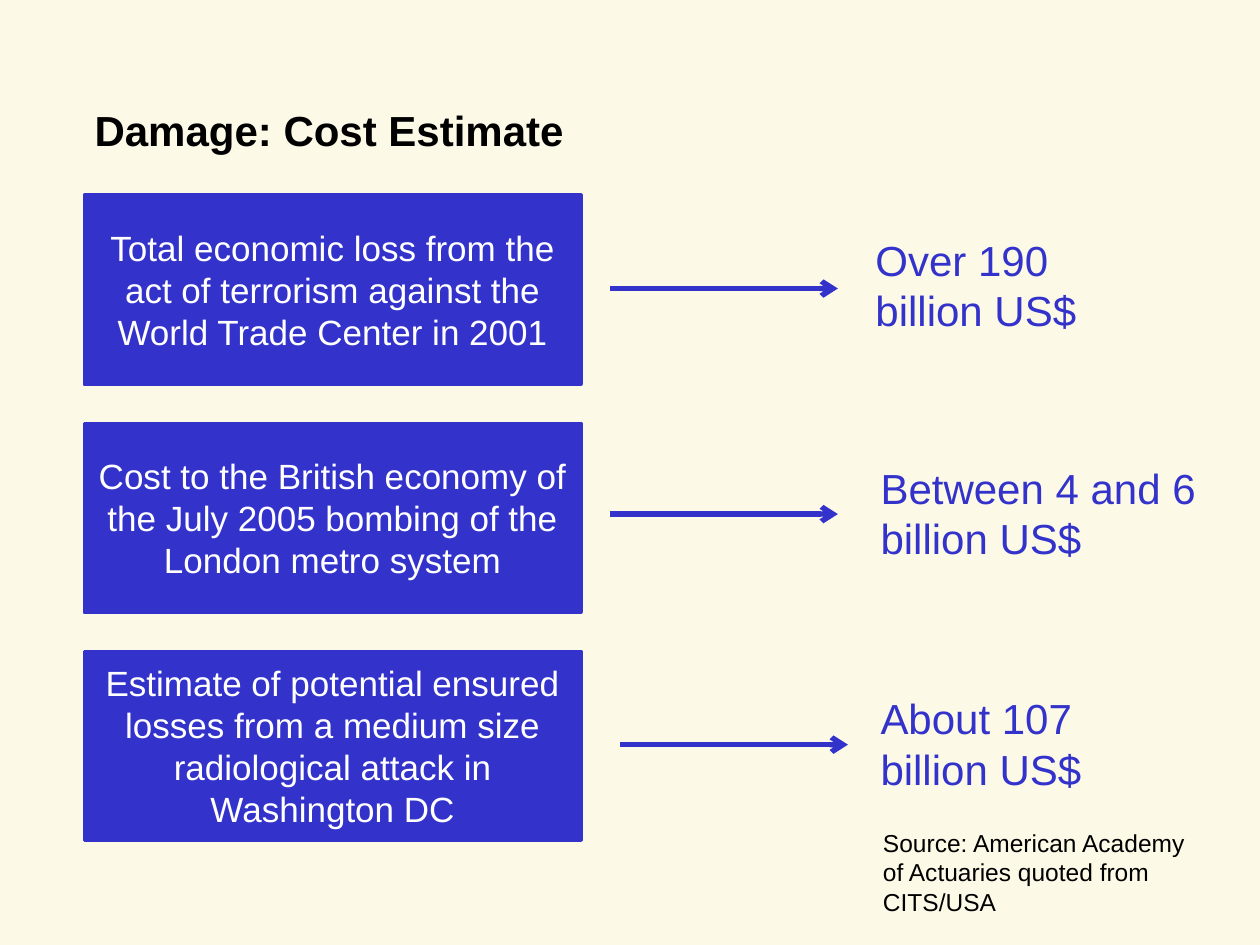
from dataclasses import dataclass

from lxml.etree import SubElement
from pptx import Presentation
from pptx.dml.color import RGBColor
from pptx.enum.shapes import MSO_CONNECTOR, MSO_SHAPE
from pptx.enum.text import MSO_ANCHOR, MSO_AUTO_SIZE, PP_ALIGN
from pptx.oxml.ns import qn
from pptx.util import Inches, Pt


@dataclass(frozen=True)
class Theme:
    font: str = "Arial"
    background: RGBColor = RGBColor(0xFC, 0xFA, 0xE7)
    accent: RGBColor = RGBColor(0x33, 0x33, 0xCC)
    dark: RGBColor = RGBColor(0, 0, 0)
    light: RGBColor = RGBColor(0xFF, 0xFF, 0xFF)
    large: int = 24
    body: int = 20
    small: int = 14


class SlideBuilder:
    """Draws on a grid of 100 columns by 75 rows."""

    COLS, ROWS = 100, 75

    def __init__(self, prs, theme):
        self.theme = theme
        self.col = prs.slide_width / self.COLS
        self.row = prs.slide_height / self.ROWS
        self.slide = prs.slides.add_slide(prs.slide_layouts[6])
        fill = self.slide.background.fill
        fill.solid()
        fill.fore_color.rgb = theme.background

    def place(self, x, y, w, h):
        return (round(x * self.col), round(y * self.row),
                round(w * self.col), round(h * self.row))

    def add_text(self, tf, text, size, color, bold=False, align=PP_ALIGN.LEFT):
        tf.word_wrap = True
        p = tf.paragraphs[0]
        p.alignment = align
        r = p.add_run()
        r.text = text
        r.font.name = self.theme.font
        r.font.size = Pt(size)
        r.font.bold = bold
        r.font.color.rgb = color

    def title(self, text, *cell):
        tf = self.slide.shapes.add_textbox(*self.place(*cell)).text_frame
        tf.margin_left = tf.margin_right = tf.margin_top = tf.margin_bottom = 0
        tf.vertical_anchor = MSO_ANCHOR.BOTTOM
        self.add_text(tf, text, self.theme.large, self.theme.dark, bold=True)

    def label(self, text, size, color, *cell):
        tf = self.slide.shapes.add_textbox(*self.place(*cell)).text_frame
        tf.auto_size = MSO_AUTO_SIZE.SHAPE_TO_FIT_TEXT
        self.add_text(tf, text, size, color)

    def box(self, text, *cell):
        sp = self.slide.shapes.add_shape(MSO_SHAPE.RECTANGLE, *self.place(*cell))
        sp.shadow.inherit = False
        sp.fill.solid()
        sp.fill.fore_color.rgb = self.theme.accent
        sp.line.color.rgb = self.theme.accent
        sp.line.width = Pt(2)
        sp.text_frame.vertical_anchor = MSO_ANCHOR.MIDDLE
        self.add_text(sp.text_frame, text, self.theme.body, self.theme.light,
                      align=PP_ALIGN.CENTER)

    def arrow(self, x, y, length):
        left, top, width, _ = self.place(x, y, length, 0)
        arrow = self.slide.shapes.add_connector(
            MSO_CONNECTOR.STRAIGHT, left, top, left + width, top)
        arrow.line.color.rgb = self.theme.accent
        arrow.line.width = Pt(3)
        properties = arrow.element.spPr
        SubElement(properties.find(qn("a:ln")), qn("a:tailEnd"), type="arrow")
        SubElement(properties, qn("a:effectLst"))


# Event, arrow start (column, row), cost, cost position (column, row), cost width
ESTIMATES = [
    ("Total economic loss from the act of terrorism against the "
     "World Trade Center in 2001",
     (48.4, 22.9), "Over 190 billion US$", (68.5, 18.1), 23.6),
    ("Cost to the British economy of the July 2005 bombing of the "
     "London metro system",
     (48.4, 40.8), "Between 4 and 6 billion US$", (68.9, 36.2), 29.1),
    ("Estimate of potential ensured losses from a medium size "
     "radiological attack in Washington DC",
     (49.2, 59.1), "About 107 billion US$", (68.9, 54.5), 23.6),
]
BOX_TOP, BOX_PITCH = 15.5, 18.1


def main():
    prs = Presentation()
    prs.slide_width, prs.slide_height = Inches(10), Inches(7.5)
    theme = Theme()
    s = SlideBuilder(prs, theme)

    s.title("Damage: Cost Estimate", 7.5, 5.8, 84.9, 6.5)
    for i, (event, start, cost, cost_at, cost_width) in enumerate(ESTIMATES):
        s.box(event, 6.7, BOX_TOP + i * BOX_PITCH, 39.4, 15)
        s.arrow(*start, 18.1)
        s.label(cost, theme.large, theme.accent, *cost_at, cost_width, 9.1)
    s.label("Source: American Academy of Actuaries quoted from CITS/USA",
            theme.small, theme.dark, 69.1, 65.2, 26, 8.1)

    prs.save("out.pptx")


if __name__ == "__main__":
    main()
